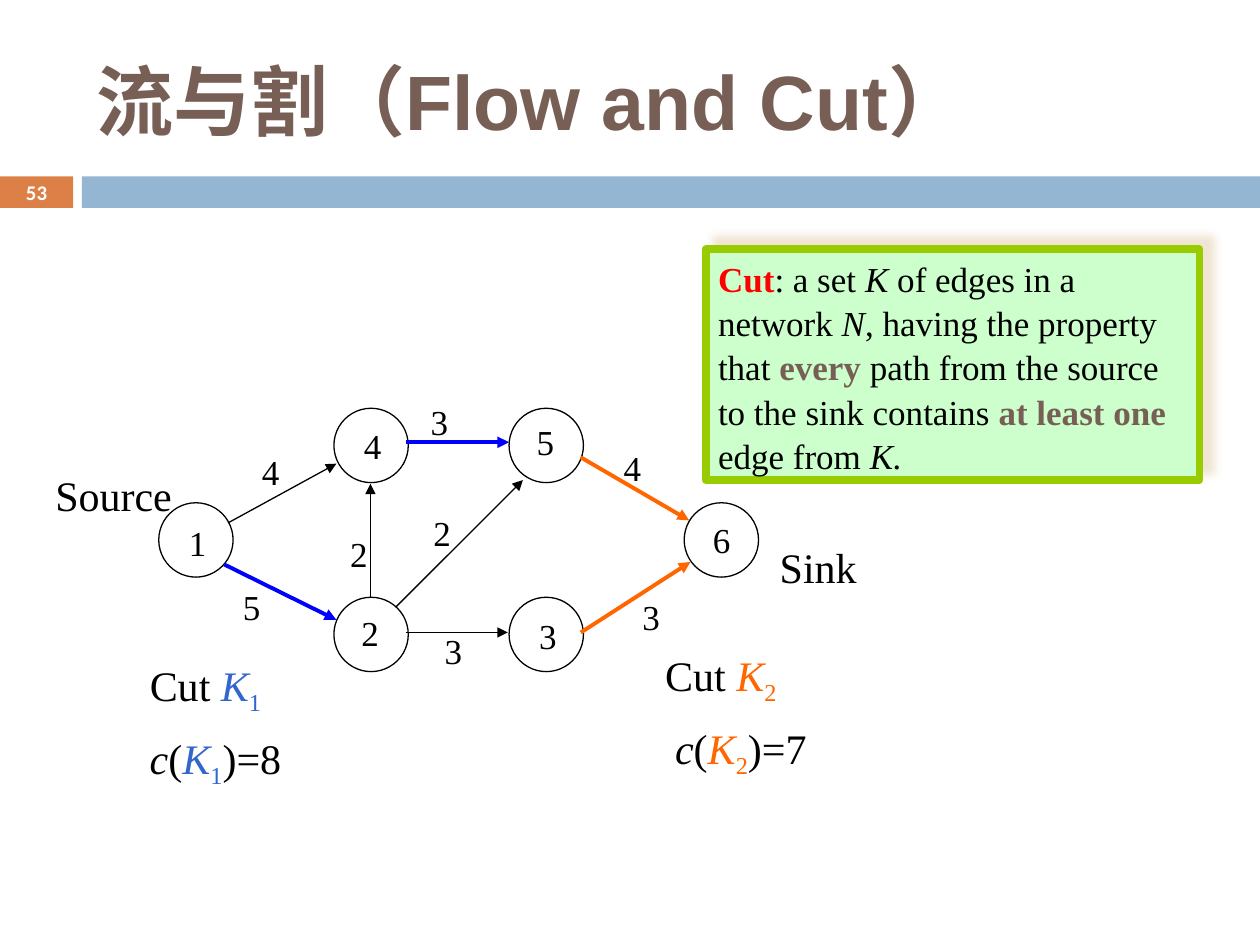
import dataclasses
import typing

import lxml.etree
import pptx
import pptx.dml.color
import pptx.enum.shapes
import pptx.enum.text
import pptx.oxml
import pptx.oxml.ns
import pptx.util

# The page is a grid of 100 columns by 75 rows; all places are in grid units.
COLUMNS, ROWS = 100, 75
SERIF = "Times New Roman"
BLACK, WHITE, BROWN = "000000", "FFFFFF", "775F55"
BLUE, CUT_BLUE, ORANGE, RED = "0000FF", "3366CC", "FF6600", "FF0000"
NODE_SIZE = 5.9
NODE_LEFT, NODE_TOP = 12.6, 32.4
NODE_STEP_X, NODE_STEP_Y = 13.9, 7.5

deck = pptx.Presentation()
deck.slide_width = pptx.util.Inches(10)
deck.slide_height = pptx.util.Inches(7.5)
page = deck.slides.add_slide(deck.slide_layouts[6])


@dataclasses.dataclass
class Span:
    text: str
    color: str = BLACK
    bold: bool = False
    italic: bool = False
    font: typing.Optional[str] = None
    subscript: bool = False


@dataclasses.dataclass
class Node:
    name: str
    column: int
    row: int
    label_dx: float
    label_dy: float


@dataclasses.dataclass
class Edge:
    start: tuple[float, float]
    end: tuple[float, float]
    capacity: str
    label: tuple[float, float]
    color: str = BLACK
    width: float = 0.75


@dataclasses.dataclass
class Cut:
    index: str
    capacity: str
    color: str
    name_at: tuple[float, float]
    value_at: tuple[float, float]


NODES = [
    Node("1", 0, 1, 1.4, 0.8),
    Node("4", 1, 0, 1.4, 0.6),
    Node("5", 2, 0, 1.2, 0.3),
    Node("2", 1, 2, 1.2, 0.5),
    Node("3", 2, 2, 1.4, 0.7),
    Node("6", 3, 1, 1.3, 0.6),
]
EDGES = [
    Edge((18.1, 41.5), (26.7, 36.8), "4", (19.8, 35.1)),
    Edge((17.8, 44.8), (26.7, 49.2), "5", (18.3, 45.8), BLUE, 2.25),
    Edge((32.2, 35.1), (40.4, 35.1), "3", (33.2, 31.1), BLUE, 2.25),
    Edge((32.2, 50.2), (40.3, 50.2), "3", (34.3, 49.3)),
    Edge((31.4, 48.2), (41.5, 38.1), "2", (33.4, 39.9)),
    Edge((46.1, 36.3), (54.7, 41.3), "4", (48.5, 34.8), ORANGE, 2.25),
    Edge((46.1, 50.2), (54.8, 44.6), "3", (50, 46.6), ORANGE, 2.25),
    Edge((29.4, 47.4), (29.4, 38.4), "2", (26.8, 41.6)),
]
CUTS = [
    Cut("1", "8", CUT_BLUE, (10.9, 51.6), (10.9, 57.4)),
    Cut("2", "7", ORANGE, (51.8, 50.8), (52.6, 56.6)),
]
DEFINITION = [
    Span("Cut", RED, bold=True),
    Span(": a set "),
    Span("K", italic=True),
    Span(" of edges in a network "),
    Span("N", italic=True),
    Span(", having the property that "),
    Span("every", BROWN, bold=True),
    Span(" path from the source to the sink contains "),
    Span("at least one", BROWN, bold=True),
    Span(" edge from "),
    Span("K.", italic=True),
]


def rgb(color: str) -> pptx.dml.color.RGBColor:
    return pptx.dml.color.RGBColor.from_string(color)


def across(columns: float) -> int:
    return round(deck.slide_width * columns / COLUMNS)


def down(rows: float) -> int:
    return round(deck.slide_height * rows / ROWS)


def place(left: float, top: float, width: float, height: float) -> tuple[int, int, int, int]:
    return across(left), down(top), across(width), down(height)


def write(box, spans: list[Span], size: float, font: str = SERIF, centered: bool = False,
          anchor=pptx.enum.text.MSO_ANCHOR.TOP, spacing: float = 1.05) -> None:
    frame = box.text_frame
    frame.word_wrap = True
    frame.vertical_anchor = anchor
    para = frame.paragraphs[0]
    para.alignment = pptx.enum.text.PP_ALIGN.CENTER if centered else pptx.enum.text.PP_ALIGN.LEFT
    para.line_spacing = spacing
    para.font.size = pptx.util.Pt(size)
    para.font.name = font
    for span in spans:
        run = para.add_run()
        run.text = span.text
        run.font.color.rgb = rgb(span.color)
        run.font.bold = span.bold
        run.font.italic = span.italic
        if span.font:
            run.font.name = span.font
        if span.subscript:
            run.font._element.set("baseline", "-25000")


def add_text(left: float, top: float, width: float, height: float, spans: list[Span],
             size: float, **style) -> None:
    write(page.shapes.add_textbox(*place(left, top, width, height)), spans, size, **style)


def add_figure(kind, left: float, top: float, width: float, height: float,
               fill: typing.Optional[str] = None, line: typing.Optional[str] = None,
               line_width: float = 0.75):
    shape = page.shapes.add_shape(kind, *place(left, top, width, height))
    shape.shadow.inherit = False
    if fill:
        shape.fill.solid()
        shape.fill.fore_color.rgb = rgb(fill)
    else:
        shape.fill.background()
    if line:
        shape.line.color.rgb = rgb(line)
        shape.line.width = pptx.util.Pt(line_width)
    else:
        shape.line.fill.background()
    return shape


def add_node(node: Node) -> None:
    left = NODE_LEFT + node.column * NODE_STEP_X
    top = NODE_TOP + node.row * NODE_STEP_Y
    add_figure(OVAL, left, top, NODE_SIZE, NODE_SIZE, line=BLACK)
    add_text(left + node.label_dx, top + node.label_dy, 5.8, 4.3, [Span(node.name)], 20)


def add_edge(edge: Edge) -> None:
    (x1, y1), (x2, y2) = edge.start, edge.end
    arrow = page.shapes.add_connector(pptx.enum.shapes.MSO_CONNECTOR.STRAIGHT,
                                      across(x1), down(y1), across(x2), down(y2))
    arrow.line.color.rgb = rgb(edge.color)
    arrow.line.width = pptx.util.Pt(edge.width)
    head = lxml.etree.SubElement(arrow.line._get_or_add_ln(), pptx.oxml.ns.qn("a:tailEnd"))
    head.set("type", "triangle")
    lxml.etree.SubElement(arrow._element.spPr, pptx.oxml.ns.qn("a:effectLst"))
    add_text(*edge.label, 5.8, 4.3, [Span(edge.capacity)], 20)


def add_cut(cut: Cut) -> None:
    symbol = [Span("K", cut.color, italic=True), Span(cut.index, cut.color, subscript=True)]
    add_text(*cut.name_at, 12.5, 5, [Span("Cut "), *symbol], 24)
    add_text(*cut.value_at, 16.7, 5,
             [Span("c", italic=True), Span("("), *symbol, Span(f")={cut.capacity}")], 24)


def add_shadow(shape, color: str) -> None:
    """Cast a soft shadow up and to the right."""
    effects = shape._element.spPr.find(pptx.oxml.ns.qn("a:effectLst"))
    effects.append(pptx.oxml.parse_xml(
        f'<a:outerShdw {pptx.oxml.ns.nsdecls("a")} blurRad="63500" dist="107950" dir="18900000" '
        f'algn="bl" rotWithShape="0"><a:srgbClr val="{color}"><a:alpha val="75000"/>'
        '</a:srgbClr></a:outerShdw>'))


RECTANGLE = pptx.enum.shapes.MSO_SHAPE.RECTANGLE
OVAL = pptx.enum.shapes.MSO_SHAPE.OVAL
MIDDLE = pptx.enum.text.MSO_ANCHOR.MIDDLE

number_box = add_figure(RECTANGLE, 0, 14, 5.8, 2.5, fill="DD8047")
write(number_box, [Span("53", WHITE, bold=True)], 11.9, font="Calibri", centered=True,
      anchor=MIDDLE, spacing=1)
add_figure(RECTANGLE, 6.5, 14, 93.5, 2.5, fill="94B6D2")
add_text(6.7, 2.5, 89.2, 10.8,
         [Span("流与割", BROWN, bold=True, font="Calibri"), Span("（Flow and Cut）", BROWN, bold=True)],
         44, font="Arial", anchor=MIDDLE, spacing=1)
for node in NODES:
    add_node(node)
for edge in EDGES:
    add_edge(edge)
for cut in CUTS:
    add_cut(cut)
add_text(3.4, 36.6, 17.5, 5, [Span("Source")], 24)
add_text(60.9, 42.3, 18.3, 5, [Span("Sink")], 24)
definition_box = add_figure(RECTANGLE, 56, 19.8, 39.2, 18.3, "CCFFCC", "99CC00", 4.5)
add_shadow(definition_box, "EBDDC3")
write(definition_box, DEFINITION, 20)
deck.save("out.pptx")
